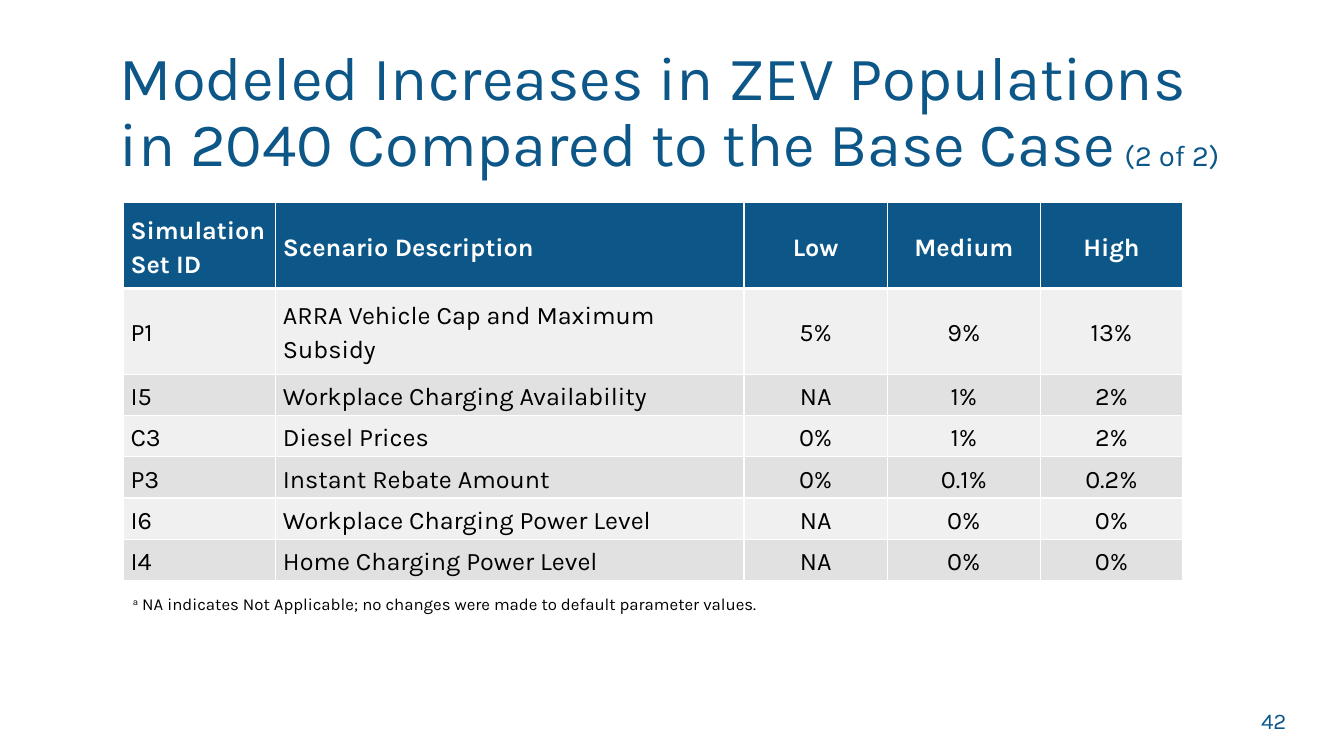
from lxml import etree
from pptx import Presentation
from pptx.dml.color import RGBColor
from pptx.enum.text import MSO_ANCHOR, MSO_AUTO_SIZE, PP_ALIGN
from pptx.oxml.ns import qn
from pptx.util import Cm, Pt

LEFT, CENTER, RIGHT = PP_ALIGN.LEFT, PP_ALIGN.CENTER, PP_ALIGN.RIGHT
TOP, MIDDLE = MSO_ANCHOR.TOP, MSO_ANCHOR.MIDDLE
NO_AUTOFIT = MSO_AUTO_SIZE.NONE
TITLE_ONLY_LAYOUT = 5

FONT = "Karla"
BLUE, WHITE, BLACK = "0C5788", "FFFFFF", "000000"
BAND_FILLS = ("F0F0F0", "E1E1E1")

COLUMN_WIDTHS = (3.84, 11.81, 3.61, 3.86, 3.58)
ROW_HEIGHTS = (2.16, 2.16) + (1.04,) * 5
SCENARIOS = (
    ("Simulation Set ID", "Scenario Description", "Low", "Medium", "High"),
    ("P1", "ARRA Vehicle Cap and Maximum Subsidy", "5%", "9%", "13%"),
    ("I5", "Workplace Charging Availability", "NA", "1%", "2%"),
    ("C3", "Diesel Prices", "0%", "1%", "2%"),
    ("P3", "Instant Rebate Amount", "0%", "0.1%", "0.2%"),
    ("I6", "Workplace Charging Power Level", "NA", "0%", "0%"),
    ("I4", "Home Charging Power Level", "NA", "0%", "0%"),
)


def color(hex_value):
    return RGBColor.from_string(hex_value)


def format_paragraph(paragraph, size, hex_value, alignment=LEFT, bold=False):
    paragraph.alignment = alignment
    font = paragraph.font
    font.name, font.size, font.bold = FONT, Pt(size), bold
    font.color.rgb = color(hex_value)


def add_title(slide):
    title = slide.shapes.title
    title.left, title.top = Cm(2.77), Cm(1.02)
    title.width, title.height = Cm(28.5), Cm(3.68)
    frame = title.text_frame
    frame.auto_size, frame.vertical_anchor = NO_AUTOFIT, MIDDLE
    paragraph = frame.paragraphs[0]
    format_paragraph(paragraph, 44, BLUE)
    paragraph.line_spacing = 0.9
    paragraph.add_run().text = (
        "Modeled Increases in ZEV Populations in 2040 Compared to the Base Case")
    part_number = paragraph.add_run()
    part_number.text = " (2 of 2)"
    part_number.font.size = Pt(21)


def add_text_box(slide, left, top, width, height, anchor):
    """Add a wrapping text box and return its first paragraph."""
    box = slide.shapes.add_textbox(Cm(left), Cm(top), Cm(width), Cm(height))
    frame = box.text_frame
    frame.word_wrap, frame.vertical_anchor = True, anchor
    return frame.paragraphs[0]


def set_border(cell, side, width):
    properties = cell._tc.get_or_add_tcPr()
    line = etree.SubElement(properties, qn("a:ln" + side), w=str(Pt(width)))
    fill = etree.SubElement(line, qn("a:solidFill"))
    etree.SubElement(fill, qn("a:srgbClr"), val=WHITE)


def fill_cell(cell, text, row, column):
    is_header = row == 0
    cell.vertical_anchor = MIDDLE
    cell.margin_left = cell.margin_right = Cm(0.19)
    cell.margin_top = cell.margin_bottom = 0

    # The rule under the header is thicker than the other borders
    border_widths = {"L": 1, "R": 1, "T": 3 if row == 1 else 1, "B": 3 if is_header else 1}
    for side, width in border_widths.items():
        set_border(cell, side, width)
    cell.fill.solid()
    cell.fill.fore_color.rgb = color(BLUE if is_header else BAND_FILLS[(row - 1) % 2])

    paragraph = cell.text_frame.paragraphs[0]
    paragraph.text = text
    format_paragraph(paragraph, 18, WHITE if is_header else BLACK,
                     CENTER if column >= 2 else LEFT, is_header)
    paragraph.line_spacing = 1.15
    paragraph.space_before = paragraph.space_after = Pt(6)


def add_scenario_table(slide):
    frame = slide.shapes.add_table(
        len(SCENARIOS), len(COLUMN_WIDTHS), Cm(3.1), Cm(5.11),
        Cm(sum(COLUMN_WIDTHS)), Cm(sum(ROW_HEIGHTS)))
    table = frame.table
    for column, width in zip(table.columns, COLUMN_WIDTHS):
        column.width = Cm(width)
    for row, height in zip(table.rows, ROW_HEIGHTS):
        row.height = Cm(height)
    for row, texts in enumerate(SCENARIOS):
        for column, text in enumerate(texts):
            fill_cell(table.cell(row, column), text, row, column)


def add_footnote(slide):
    paragraph = add_text_box(slide, 3.1, 14.76, 26.67, 0.79, TOP)
    format_paragraph(paragraph, 12, BLACK)
    paragraph.line_spacing = 1.15
    paragraph.space_before = Pt(6)
    marker = paragraph.add_run()
    marker.text = "a"
    marker._r.get_or_add_rPr().set("baseline", "30000")
    paragraph.add_run().text = (
        " NA indicates Not Applicable; no changes were made to default parameter values.")


def add_page_number(slide):
    paragraph = add_text_box(slide, 23.93, 17.65, 8.74, 1.02, MIDDLE)
    paragraph.text = "42"
    format_paragraph(paragraph, 16, BLUE, RIGHT)


def main():
    presentation = Presentation()
    presentation.slide_width, presentation.slide_height = Cm(33.87), Cm(19.05)
    slide = presentation.slides.add_slide(presentation.slide_layouts[TITLE_ONLY_LAYOUT])
    add_title(slide)
    add_page_number(slide)
    add_scenario_table(slide)
    add_footnote(slide)
    presentation.save("out.pptx")


if __name__ == "__main__":
    main()
